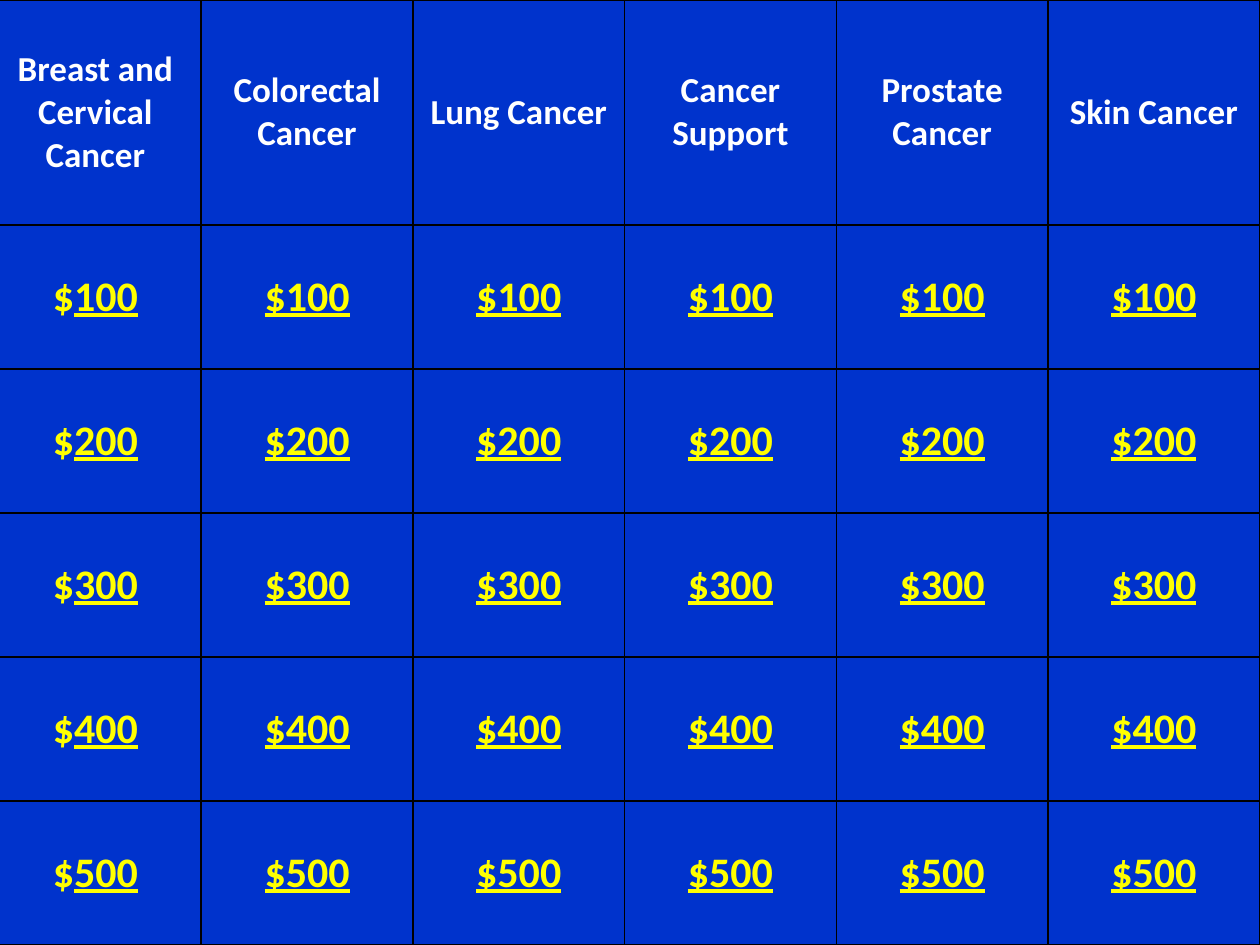
import pptx
import pptx.dml.color
import pptx.enum.text
import pptx.oxml
import pptx.oxml.ns
import pptx.util

Pt = pptx.util.Pt
COLORS = {"board": "0033CC", "border": "000000", "category": "FFFFFF", "prize": "FFFF00"}
CATEGORIES = ["Breast and Cervical Cancer", "Colorectal Cancer", "Lung Cancer",
              "Cancer\nSupport", "Prostate Cancer", "Skin Cancer"]
PRIZES = [100, 200, 300, 400, 500]
CATEGORY_FORMAT = {"name": "Calibri", "size": Pt(20), "bold": True}
PRIZE_FORMAT = {"name": "Calibri", "size": Pt(24), "bold": True}


def rgb(name):
    """Return the named colour."""
    return pptx.dml.color.RGBColor.from_string(COLORS[name])


def add_span(para, text, color, formats):
    """Add one formatted run to a paragraph."""
    span = para.add_run()
    span.text = text
    for key, value in formats.items():
        setattr(span.font, key, value)
    span.font.color.rgb = rgb(color)


def style_cell(cell):
    """Give a cell its borders, fill and vertical centring."""
    properties = cell._tc.get_or_add_tcPr()
    for side in ("lnL", "lnR", "lnT", "lnB"):
        properties.append(pptx.oxml.parse_xml(
            f'<a:{side} {pptx.oxml.ns.nsdecls("a")} w="{Pt(1)}"><a:solidFill>'
            f'<a:srgbClr val="{COLORS["border"]}"/></a:solidFill></a:{side}>'))
    cell.fill.solid()
    cell.fill.fore_color.rgb = rgb("board")
    cell.vertical_anchor = pptx.enum.text.MSO_ANCHOR.MIDDLE


def fill_cell(cell, lines, color, formats):
    """Write centred paragraphs, each a list of (text, underlined) pairs."""
    style_cell(cell)
    frame = cell.text_frame
    for index, parts in enumerate(lines):
        para = frame.add_paragraph() if index else frame.paragraphs[0]
        para.alignment = pptx.enum.text.PP_ALIGN.CENTER
        for text, underlined in parts:
            add_span(para, text, color, {**formats, "underline": underlined})


def add_board(page, left, top, width, height, header_height):
    """Place the game board of categories and prizes in the given box."""
    table = page.shapes.add_table(len(PRIZES) + 1, len(CATEGORIES), Pt(left), Pt(top),
                                  Pt(width), Pt(height)).table
    table.horz_banding = False
    for column in table.columns:
        column.width = Pt(width / len(CATEGORIES))
    for index, row in enumerate(table.rows):
        row.height = Pt((height - header_height) / len(PRIZES) if index else header_height)
    for column, category in enumerate(CATEGORIES):
        lines = [[(line, False)] for line in category.split("\n")]
        fill_cell(table.cell(0, column), lines, "category", CATEGORY_FORMAT)
        for row, prize in enumerate(PRIZES, start=1):
            parts = [(f"${prize}", True)] if column else [("$", False), (str(prize), True)]
            fill_cell(table.cell(row, column), [parts], "prize", PRIZE_FORMAT)


def main():
    """Build the deck and save it."""
    deck = pptx.Presentation()
    deck.slide_width, deck.slide_height = Pt(720), Pt(540)
    page = deck.slides.add_slide(deck.slide_layouts[6])
    add_board(page, left=-6, top=0, width=726, height=540, header_height=128.55)
    deck.save("out.pptx")


if __name__ == "__main__":
    main()
